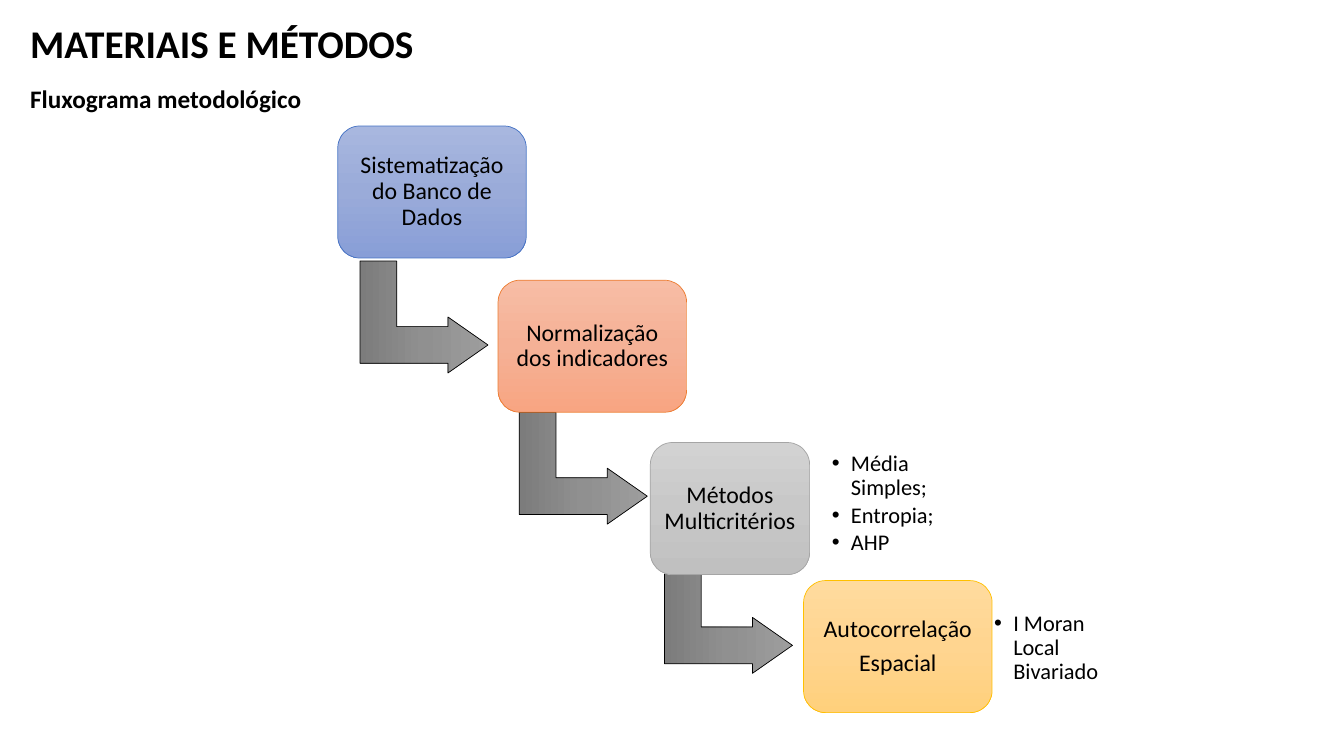
from copy import deepcopy

from pptx import Presentation
from pptx.dml.color import RGBColor
from pptx.enum.shapes import MSO_SHAPE
from pptx.enum.text import MSO_ANCHOR, MSO_AUTO_SIZE, PP_ALIGN
from pptx.oxml import parse_xml
from pptx.oxml.ns import nsdecls, qn
from pptx.util import Inches, Pt

BLACK = RGBColor(0x00, 0x00, 0x00)
ARROW_GRAYS = [RGBColor(0x9D, 0x9D, 0x9D), RGBColor(0x90, 0x90, 0x90), RGBColor(0x7C, 0x7C, 0x7C)]
BLUES = [RGBColor(0xA8, 0xB7, 0xDF), RGBColor(0x9A, 0xAB, 0xD9), RGBColor(0x88, 0x9E, 0xD7)]
BLUE_LINE = RGBColor(0x44, 0x72, 0xC4)
ORANGES = [RGBColor(0xF7, 0xBD, 0xA5), RGBColor(0xF5, 0xB1, 0x96), RGBColor(0xF8, 0xA5, 0x82)]
ORANGE_LINE = RGBColor(0xED, 0x7D, 0x31)
GRAYS = [RGBColor(0xD2, 0xD2, 0xD2), RGBColor(0xC8, 0xC8, 0xC8), RGBColor(0xC0, 0xC0, 0xC0)]
GRAY_LINE = RGBColor(0xA5, 0xA5, 0xA5)
GOLDS = [RGBColor(0xFF, 0xDB, 0x9E), RGBColor(0xFF, 0xD5, 0x90), RGBColor(0xFF, 0xD0, 0x7C)]
GOLD_LINE = RGBColor(0xFF, 0xC0, 0x00)

STEPS = [
    (["Sistematização do Banco de Dados"], 3.35, 1.25, 1.87, BLUES, BLUE_LINE),
    (["Normalização dos indicadores"], 4.94, 2.78, 1.87, ORANGES, ORANGE_LINE),
    (["Métodos Multicritérios"], 6.45, 4.39, 1.58, GRAYS, GRAY_LINE),
    (["Autocorrelação", "Espacial"], 7.97, 5.76, 1.87, GOLDS, GOLD_LINE),
]
ARROWS = [(3.65, 2.51), (5.23, 4.01), (6.67, 5.49)]
STEP_HEIGHT = 1.31


def write_text(box, lines, size, bold=False, align=PP_ALIGN.LEFT, anchor=MSO_ANCHOR.MIDDLE,
               inset=(0.07, 0.07), spacing=0.9, after=0, wrap=True):
    frame = box.text_frame
    frame.text = "\n".join(lines)
    frame.auto_size = MSO_AUTO_SIZE.NONE
    frame.word_wrap = wrap
    frame.vertical_anchor = anchor
    frame.margin_left = frame.margin_right = Inches(inset[0])
    frame.margin_top = frame.margin_bottom = Inches(inset[1])
    for para in frame.paragraphs:
        para.alignment = align
        para.line_spacing = spacing
        para.space_before = Pt(0)
        para.space_after = Pt(after)
        for span in para.runs:
            span.font.name = "Calibri"
            span.font.size = Pt(size)
            span.font.bold = bold
            span.font.color.rgb = BLACK


class FlowPage:
    heading_style = dict(bold=True, anchor=MSO_ANCHOR.TOP, inset=(0.1, 0.05), spacing=1, wrap=False)

    def __init__(self, deck):
        self.page = deck.slides.add_slide(deck.slide_layouts[3])

    def place(self, box, left, top, width, height):
        box.left, box.top = Inches(left), Inches(top)
        box.width, box.height = Inches(width), Inches(height)

    def title(self, text, *area):
        box = self.page.shapes.title
        self.place(box, *area)
        write_text(box, [text], 28, **self.heading_style)

    def subtitle(self, text, *area):
        box = self.page.shapes.add_textbox(*map(Inches, area))
        write_text(box, [text], 18, **self.heading_style)

    def bullets(self, index, lines, *area):
        box = self.page.placeholders[index]
        self.place(box, *area)
        write_text(box, lines, 16, after=2.4)
        for para in box.text_frame.paragraphs:
            properties = para._p.get_or_add_pPr()
            properties.set("marL", str(Inches(0.19)))
            properties.set("indent", str(Inches(-0.19)))
            properties.append(parse_xml(f'<a:buChar {nsdecls("a")} char="•"/>'))

    def shape(self, kind, area, colors, line):
        box = self.page.shapes.add_shape(kind, *map(Inches, area))
        box.shadow.inherit = False
        box.line.color.rgb = line
        box.line.width = Pt(0.5)
        box.fill.gradient()
        box.fill.gradient_angle = 270
        stop_list = box._element.spPr.find(qn("a:gradFill")).find(qn("a:gsLst"))
        stop_list.append(deepcopy(stop_list[0]))
        for stop, color, position in zip(box.fill.gradient_stops, colors, (0, 0.5, 1)):
            stop.color.rgb = color
            stop.position = position
        return box

    def arrow(self, left, top):
        box = self.shape(MSO_SHAPE.BENT_UP_ARROW, (left, top, 1.11, 1.27), ARROW_GRAYS, BLACK)
        box.rotation = 90
        for index, value in enumerate((0.328, 0.25, 0.358)):
            box.adjustments[index] = value

    def step(self, lines, left, top, width, colors, line):
        box = self.shape(MSO_SHAPE.ROUNDED_RECTANGLE, (left, top, width, STEP_HEIGHT), colors, line)
        write_text(box, lines, 17, align=PP_ALIGN.CENTER, after=6)


def main():
    deck = Presentation()
    deck.slide_width, deck.slide_height = Inches(13.33), Inches(7.5)
    flow = FlowPage(deck)
    flow.title("MATERIAIS E MÉTODOS", 0.2, 0.14, 4.39, 0.57)
    flow.subtitle("Fluxograma metodológico", 0.2, 0.78, 3.05, 0.4)
    for arrow in ARROWS:
        flow.arrow(*arrow)
    for step in STEPS:
        flow.step(*step)
    flow.bullets(1, ["Média Simples;", "Entropia;", "AHP"], 8.18, 4.47, 1.36, 1.06)
    flow.bullets(2, ["I Moran Local Bivariado"], 9.79, 5.9, 1.51, 1.06)
    deck.save("out.pptx")


if __name__ == "__main__":
    main()
